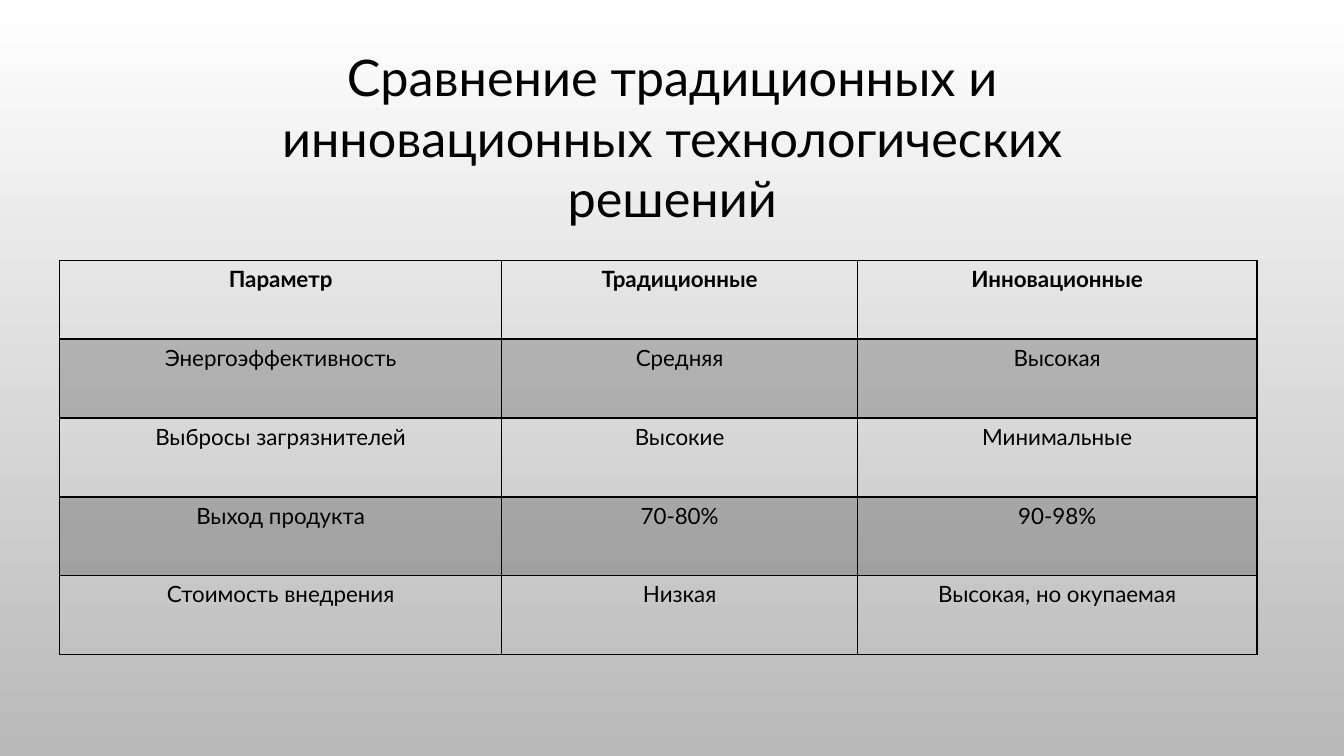
"""Build a slide comparing traditional and innovative technological solutions."""
from lxml import etree
from pptx import Presentation
from pptx.dml.color import RGBColor
from pptx.enum import text
from pptx.oxml import ns
from pptx.util import Pt

TITLE = "Сравнение традиционных и инновационных технологических решений"
ROWS = [
    ("Параметр", "Традиционные", "Инновационные"),
    ("Энергоэффективность", "Средняя", "Высокая"),
    ("Выбросы загрязнителей", "Высокие", "Минимальные"),
    ("Выход продукта", "70-80%", "90-98%"),
    ("Стоимость внедрения", "Низкая", "Высокая, но окупаемая"),
]
COLUMN_WIDTHS = (316, 254, 285.4)
ROW_HEIGHT = 56.4
TABLE_LEFT, TABLE_TOP = 42.5, 185.8
TITLE_BOX = (138.2, 28.8, 684, 138.2)

FONT = "Lato"
BLACK = RGBColor(0x00, 0x00, 0x00)
WHITE = RGBColor(0xFF, 0xFF, 0xFF)
GRAY = RGBColor(0xB9, 0xB9, 0xB9)
BAND_ALPHA = 20


def write(frame, content, size, bold=False):
    """Put centred text in a text frame."""
    paragraph = frame.paragraphs[0]
    paragraph.alignment = text.PP_ALIGN.CENTER
    run = paragraph.add_run()
    run.text = content
    run.font.name = FONT
    run.font.size = Pt(size)
    run.font.bold = bold
    run.font.color.rgb = BLACK


def add_borders(cell, color, width):
    """Draw a solid line on each side of a cell."""
    properties = cell._tc.get_or_add_tcPr()
    for side in ("lnL", "lnR", "lnT", "lnB"):
        line = etree.SubElement(properties, ns.qn(f"a:{side}"), w=str(Pt(width)))
        fill = etree.SubElement(line, ns.qn("a:solidFill"))
        etree.SubElement(fill, ns.qn("a:srgbClr"), val=str(color))


def fill_band(cell, color, alpha):
    """Fill a cell with a translucent colour."""
    cell.fill.solid()
    cell.fill.fore_color.rgb = color
    color_element = cell._tc.tcPr.find(f".//{ns.qn('a:solidFill')}[last()]/..")
    color_element = cell._tc.tcPr.find(ns.qn("a:solidFill")).find(ns.qn("a:srgbClr"))
    etree.SubElement(color_element, ns.qn("a:alpha"), val=str(alpha * 1000))


def set_background(slide):
    """Shade the slide from white at the top to gray at the bottom."""
    fill = slide.background.fill
    fill.gradient()
    fill.gradient_angle = 270
    for stop, position, color in zip(fill.gradient_stops, (0, 1), (WHITE, GRAY)):
        stop.position = position
        stop.color.rgb = color


def add_title(slide):
    """Place and format the title."""
    title = slide.shapes.title
    title.left, title.top, title.width, title.height = map(Pt, TITLE_BOX)
    frame = title.text_frame
    frame.word_wrap = True
    frame.auto_size = text.MSO_AUTO_SIZE.SHAPE_TO_FIT_TEXT
    frame.vertical_anchor = text.MSO_ANCHOR.MIDDLE
    write(frame, TITLE, size=36)


def add_comparison(slide):
    """Add the comparison table."""
    table = slide.shapes.add_table(
        len(ROWS), len(COLUMN_WIDTHS), Pt(TABLE_LEFT), Pt(TABLE_TOP),
        Pt(sum(COLUMN_WIDTHS)), Pt(ROW_HEIGHT * len(ROWS))).table
    table.first_row = table.horz_banding = False
    for column, width in zip(table.columns, COLUMN_WIDTHS):
        column.width = Pt(width)
    for row_index, row in enumerate(ROWS):
        table.rows[row_index].height = Pt(ROW_HEIGHT)
        for column_index, content in enumerate(row):
            cell = table.cell(row_index, column_index)
            write(cell.text_frame, content, size=16, bold=row_index == 0)
            add_borders(cell, BLACK, 1)
            if row_index % 2:
                fill_band(cell, BLACK, BAND_ALPHA)
            else:
                cell.fill.background()


def main():
    """Build and save the presentation."""
    presentation = Presentation()
    presentation.slide_width, presentation.slide_height = Pt(960), Pt(540)
    slide = presentation.slides.add_slide(presentation.slide_layouts[5])
    set_background(slide)
    add_title(slide)
    add_comparison(slide)
    presentation.save("out.pptx")


if __name__ == "__main__":
    main()
